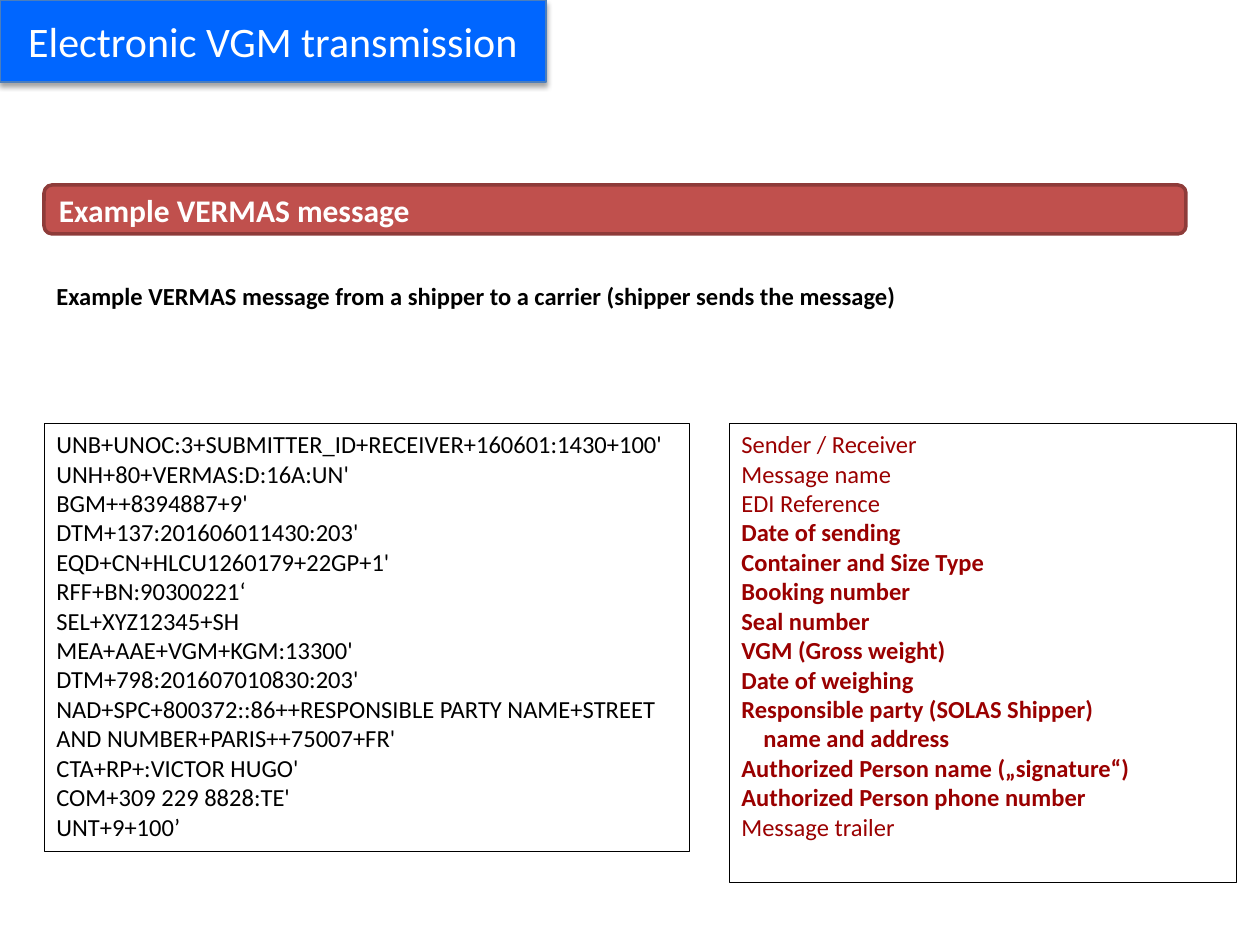
from dataclasses import dataclass
from typing import Optional

from lxml.etree import SubElement
from pptx import Presentation
from pptx.dml.color import RGBColor
from pptx.enum.shapes import MSO_SHAPE as SHAPE
from pptx.enum.text import MSO_ANCHOR as ANCHOR, MSO_AUTO_SIZE as FIT, PP_ALIGN as ALIGN
from pptx.oxml.ns import qn
from pptx.util import Emu, Pt

SCALE = 914400 / 126
FONT = "Calibri"
WHITE = RGBColor(0xFF, 0xFF, 0xFF)
BLACK = RGBColor(0x00, 0x00, 0x00)
BLUE = RGBColor(0x00, 0x66, 0xFF)
BLUE_EDGE = RGBColor(0x4B, 0x7E, 0xBC)
RED = RGBColor(0xC0, 0x50, 0x4D)
RED_EDGE = RGBColor(0x8E, 0x3B, 0x39)
DARK_RED = RGBColor(0x9A, 0x00, 0x00)


@dataclass(frozen=True)
class Line:
    text: str
    bold: bool = False
    indent: int = 0


@dataclass(frozen=True)
class Box:
    left: int
    top: int
    width: int
    height: int
    lines: list[Line]
    size: int
    color: RGBColor
    shape: SHAPE = SHAPE.RECTANGLE
    fill: Optional[RGBColor] = None
    edge: Optional[RGBColor] = None
    edge_pt: float = 0.25
    align: ALIGN = ALIGN.LEFT
    anchor: ANCHOR = ANCHOR.TOP


MESSAGE = [Line(text) for text in (
    "UNB+UNOC:3+SUBMITTER_ID+RECEIVER+160601:1430+100'",
    "UNH+80+VERMAS:D:16A:UN'",
    "BGM++8394887+9'",
    "DTM+137:201606011430:203'",
    "EQD+CN+HLCU1260179+22GP+1'",
    "RFF+BN:90300221‘",
    "SEL+XYZ12345+SH",
    "MEA+AAE+VGM+KGM:13300'",
    "DTM+798:201607010830:203'",
    "NAD+SPC+800372::86++RESPONSIBLE PARTY NAME+STREET AND NUMBER+PARIS++75007+FR'",
    "CTA+RP+:VICTOR HUGO'",
    "COM+309 229 8828:TE'",
    "UNT+9+100’",
)]
MEANINGS = [
    Line("Sender / Receiver"),
    Line("Message name"),
    Line("EDI Reference"),
    Line("Date of sending", True),
    Line("Container and Size Type", True),
    Line("Booking number", True),
    Line("Seal number", True),
    Line("VGM (Gross weight)", True),
    Line("Date of weighing", True),
    Line("Responsible party (SOLAS Shipper)", True),
    Line("name and address", True, 22),
    Line("Authorized Person name („signature“)", True),
    Line("Authorized Person phone number", True),
    Line("Message trailer"),
]
TITLE = Box(0, 0, 546, 82, [Line("Electronic VGM transmission")], 24, WHITE,
            fill=BLUE, edge=BLUE_EDGE, edge_pt=0.75, align=ALIGN.CENTER, anchor=ANCHOR.MIDDLE)
BANNER = Box(44, 185, 1142, 49, [Line("Example VERMAS message", True)], 18, WHITE,
             SHAPE.ROUNDED_RECTANGLE, RED, RED_EDGE, 2, anchor=ANCHOR.MIDDLE)
SUBTITLE = Box(44, 275, 1111, 43, [Line(
    "Example VERMAS message from a shipper to a carrier (shipper sends the message)", True)], 14, BLACK)
MESSAGE_BOX = Box(44, 423, 645, 428, MESSAGE, 14, BLACK, edge=BLACK)
MEANING_BOX = Box(729, 423, 507, 459, MEANINGS, 14, DARK_RED, edge=BLACK)


def px(value: int) -> Emu:
    """Convert whole pixels to EMU."""
    return Emu(round(value * SCALE))


def write(s, box: Box) -> None:
    """Fill a shape's text frame with the lines of a box."""
    tf = s.text_frame
    tf.auto_size = FIT.NONE
    tf.word_wrap = True
    tf.vertical_anchor = box.anchor
    for i, line in enumerate(box.lines):
        p = tf.add_paragraph() if i else tf.paragraphs[0]
        p.text = line.text
        p.alignment = box.align
        if line.indent:
            p._p.get_or_add_pPr().set("marL", str(px(line.indent)))
        p.font.name = FONT
        p.font.size = Pt(box.size)
        p.font.bold = line.bold
        p.font.color.rgb = box.color


def style(s, box: Box) -> None:
    """Apply the fill, outline and text of a box to a shape."""
    if box.fill is None:
        s.fill.background()
    else:
        s.fill.solid()
        s.fill.fore_color.rgb = box.fill
    if box.edge is None:
        s.line.fill.background()
    else:
        s.line.color.rgb = box.edge
        s.line.width = Pt(box.edge_pt)
    write(s, box)


def draw_box(slide, box: Box) -> None:
    """Draw a box as a preset shape."""
    s = slide.shapes.add_shape(box.shape, px(box.left), px(box.top), px(box.width), px(box.height))
    s.shadow.inherit = False
    style(s, box)


def draw_text(slide, box: Box) -> None:
    """Draw a box as a plain text box."""
    s = slide.shapes.add_textbox(px(box.left), px(box.top), px(box.width), px(box.height))
    write(s, box)


def draw_title(slide, box: Box) -> None:
    """Place the title placeholder with its drop shadow."""
    s = slide.shapes.title
    s.left, s.top, s.width, s.height = px(box.left), px(box.top), px(box.width), px(box.height)
    style(s, box)
    effects = SubElement(s._element.spPr, qn("a:effectLst"))
    shadow = SubElement(effects, qn("a:outerShdw"), blurRad=str(Pt(3.1)), dist=str(Pt(1.8)),
                        dir="5400000", rotWithShape="0")
    color = SubElement(shadow, qn("a:srgbClr"), val=str(BLACK))
    SubElement(color, qn("a:alpha"), val="35000")


def main() -> None:
    """Build and save the slide."""
    prs = Presentation()
    prs.slide_width, prs.slide_height = px(1260), px(945)
    slide = prs.slides.add_slide(prs.slide_layouts[5])
    draw_title(slide, TITLE)
    draw_box(slide, BANNER)
    draw_text(slide, SUBTITLE)
    for box in (MESSAGE_BOX, MEANING_BOX):
        draw_box(slide, box)
    prs.save("out.pptx")


if __name__ == "__main__":
    main()
